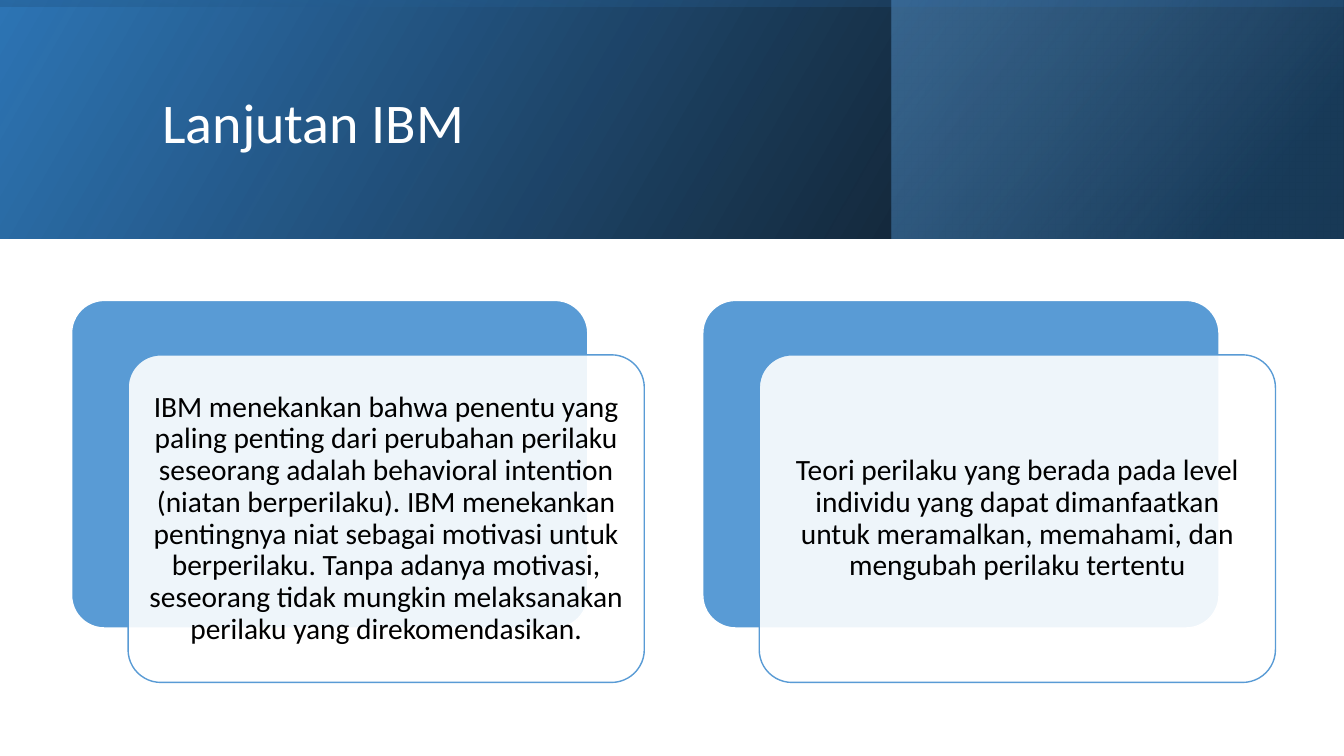
from lxml import etree
from pptx import Presentation
from pptx.dml.color import RGBColor
from pptx.enum import shapes, text
from pptx.oxml import ns
from pptx.util import Inches, Pt

TITLE = "Lanjutan IBM"
CARDS = [
    "IBM menekankan bahwa penentu yang paling penting dari perubahan perilaku seseorang "
    "adalah behavioral intention (niatan berperilaku). IBM menekankan pentingnya niat sebagai "
    "motivasi untuk berperilaku. Tanpa adanya motivasi, seseorang tidak mungkin melaksanakan "
    "perilaku yang direkomendasikan.",
    "Teori perilaku yang berada pada level individu yang dapat dimanfaatkan untuk meramalkan, "
    "memahami, dan mengubah perilaku tertentu",
]
FONT = "Calibri"
WHITE, BLACK, BLUE = "FFFFFF", "000000", "599BD5"
WIDTH, BANNER_HEIGHT = 13.33, 2.37
MIDDLE = (WIDTH - BANNER_HEIGHT) / 2
BANNERS = [
    ((0, 0, WIDTH, BANNER_HEIGHT), 0, 330, [(0, "000000", 96), (100, "2E75B5", 100)]),
    ((8.84, 0, 4.48, BANNER_HEIGHT), 0, 320,
     [(0, "1E4E79", 68), (19, "1E4E79", 68), (100, "5B9BD5", 48)]),
    ((MIDDLE, -MIDDLE, BANNER_HEIGHT, WIDTH), 270, 350,
     [(0, "2E75B5", 16), (23, "2E75B5", 16), (99, "000000", 45), (100, "000000", 45)]),
]
CARD_LEFT, CARD_TOP, CARD_PITCH = 0.71, 2.98, 6.26
CARD_WIDTH, CARD_HEIGHT = 5.12, 3.25
OFFSET_X, OFFSET_Y = 0.56, 0.54


def color(value):
    return RGBColor.from_string(value)


def set_alpha(color_element, percent):
    etree.SubElement(color_element, ns.qn("a:alpha"), val=str(percent * 1000))


def add_block(slide, kind, box):
    shape = slide.shapes.add_shape(kind, *map(Inches, box))
    shape.shadow.inherit = False
    return shape


def add_banner(slide, box, rotation, angle, stops):
    banner = add_block(slide, shapes.MSO_SHAPE.RECTANGLE, box)
    banner.rotation = rotation
    banner.line.fill.background()
    banner.fill.gradient()
    properties = banner._element.spPr
    properties.find(ns.qn("a:xfrm")).set("flipH", "1")
    gradient = properties.find(ns.qn("a:gradFill"))
    for child in list(gradient):
        gradient.remove(child)
    stop_list = etree.SubElement(gradient, ns.qn("a:gsLst"))
    for position, value, alpha in stops:
        stop = etree.SubElement(stop_list, ns.qn("a:gs"), pos=str(position * 1000))
        set_alpha(etree.SubElement(stop, ns.qn("a:srgbClr"), val=value), alpha)
    etree.SubElement(gradient, ns.qn("a:lin"), ang=str(angle * 60000), scaled="0")


def add_panel(slide, left, top, fill, line):
    panel = add_block(slide, shapes.MSO_SHAPE.ROUNDED_RECTANGLE,
                      (left, top, CARD_WIDTH, CARD_HEIGHT))
    panel.adjustments[0] = 0.1
    panel.fill.solid()
    panel.fill.fore_color.rgb = color(fill)
    panel.line.color.rgb = color(line)
    panel.line.width = Pt(1)
    return panel


def write(shape, words, size, value, alignment):
    frame = shape.text_frame
    frame.text = words
    frame.word_wrap = True
    frame.auto_size = text.MSO_AUTO_SIZE.NONE
    frame.vertical_anchor = text.MSO_ANCHOR.MIDDLE
    paragraph = frame.paragraphs[0]
    paragraph.alignment = alignment
    paragraph.line_spacing = 0.9
    paragraph.font.name = FONT
    paragraph.font.size = Pt(size)
    paragraph.font.color.rgb = color(value)
    return frame


def add_card(slide, index, words):
    left = CARD_LEFT + index * CARD_PITCH
    add_panel(slide, left, CARD_TOP, BLUE, WHITE)
    front = add_panel(slide, left + OFFSET_X, CARD_TOP + OFFSET_Y, WHITE, BLUE)
    set_alpha(front._element.spPr.find(ns.qn("a:solidFill"))[0], 90)
    frame = write(front, words, 21, BLACK, text.PP_ALIGN.CENTER)
    frame.margin_left = frame.margin_right = Inches(0.09)
    frame.margin_top = frame.margin_bottom = Inches(0.09)


def main():
    presentation = Presentation()
    presentation.slide_width = Inches(WIDTH)
    presentation.slide_height = Inches(7.5)
    slide = presentation.slides.add_slide(presentation.slide_layouts[5])

    for banner in BANNERS:
        add_banner(slide, *banner)

    title = slide.shapes.title
    title.left, title.top, title.width, title.height = map(Inches, (1.51, 0.38, 10.63, 1.72))
    write(title, TITLE, 40, WHITE, text.PP_ALIGN.LEFT)
    slide.shapes._spTree.append(title._element)

    for index, words in enumerate(CARDS):
        add_card(slide, index, words)

    presentation.save("out.pptx")


if __name__ == "__main__":
    main()
